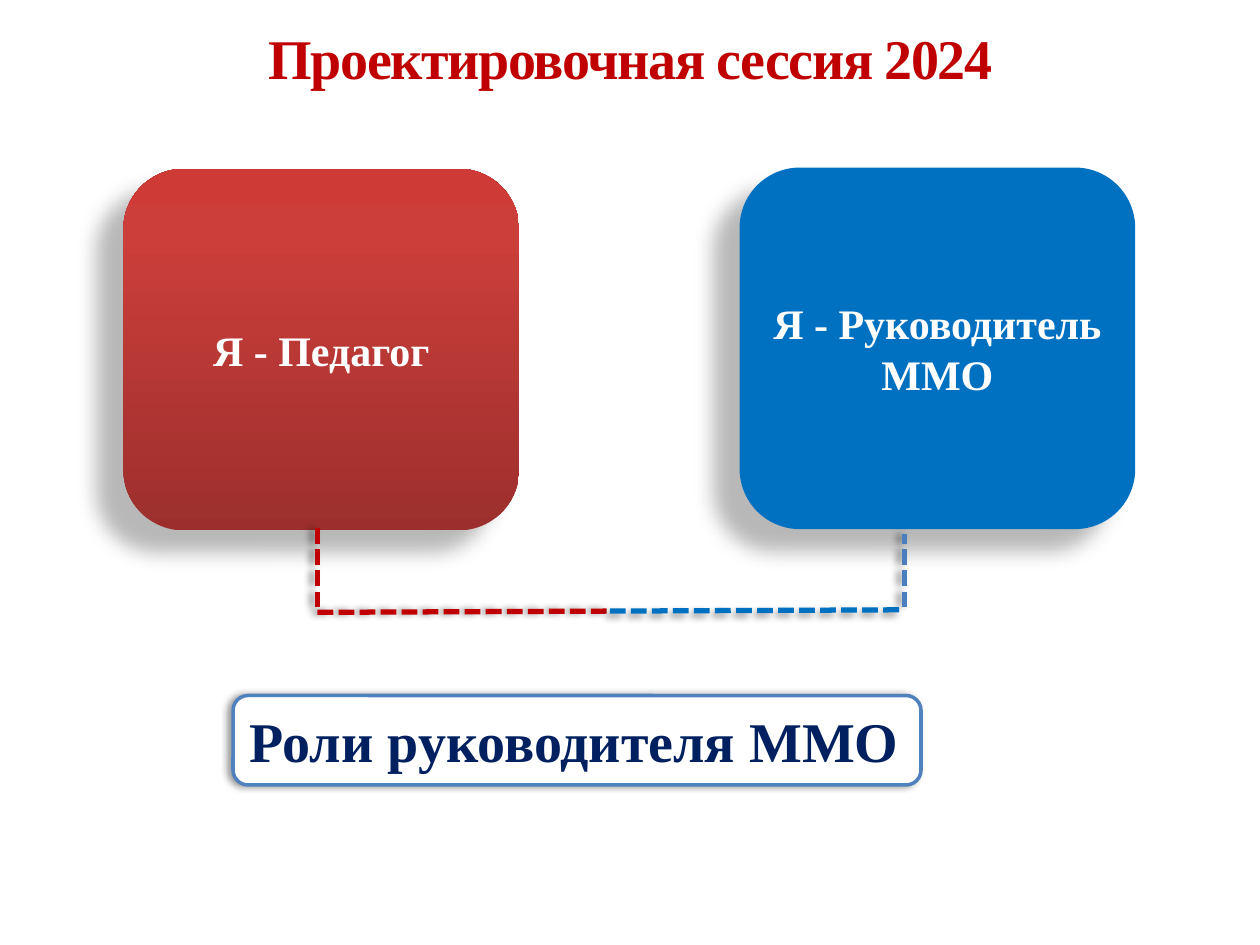
from lxml import etree
from pptx import Presentation
from pptx.dml.color import RGBColor
from pptx.enum.dml import MSO_LINE
from pptx.enum.shapes import MSO_CONNECTOR, MSO_SHAPE
from pptx.enum.text import MSO_ANCHOR, MSO_AUTO_SIZE, PP_ALIGN
from pptx.oxml import parse_xml
from pptx.oxml.ns import nsdecls, qn
from pptx.util import Inches, Pt

COLORS = {
    "red": "C00000", "blue": "0070C0", "steel": "4B7EBC", "border": "4F81BD",
    "navy": "002060", "white": "FFFFFF", "shadow": "000000",
}
RED_GRADIENT = [(0, "9C2F2D"), (80, "CB3E3A"), (100, "CE3B37")]
FONT = "Times New Roman"


def rgb(name):
    return RGBColor.from_string(COLORS[name])


def add_shadow(sp, alpha=40, blur=4, dist=3, angle=180):
    """Append an outer shadow; call after fill and line are set."""
    spPr = sp._element.spPr
    for old in spPr.findall(qn("a:effectLst")):
        spPr.remove(old)
    spPr.append(parse_xml(
        f'<a:effectLst {nsdecls("a")}><a:outerShdw blurRad="{Pt(blur)}" '
        f'dist="{Pt(dist)}" dir="{angle * 60000}" algn="ctr" rotWithShape="0">'
        f'<a:srgbClr val="{COLORS["shadow"]}"><a:alpha val="{alpha * 1000}"/>'
        '</a:srgbClr></a:outerShdw></a:effectLst>'))


def write(sp, text, size, color, align, anchor=MSO_ANCHOR.MIDDLE):
    tf = sp.text_frame
    tf.text = text
    tf.vertical_anchor = anchor
    p = tf.paragraphs[0]
    p.alignment = align
    r = p.runs[0]
    r.font.name, r.font.size, r.font.bold = FONT, Pt(size), True
    r.font.color.rgb = rgb(color)
    return r


def fill_gradient(sp, stops):
    """Fill with a vertical gradient running from bottom to top."""
    sp.fill.gradient()
    sp.fill.gradient_angle = 90
    gs_list = sp._element.spPr.find(qn("a:gradFill")).find(qn("a:gsLst"))
    for gs in list(gs_list):
        gs_list.remove(gs)
    for pos, color in stops:
        gs = etree.SubElement(gs_list, qn("a:gs"), pos=str(pos * 1000))
        etree.SubElement(gs, qn("a:srgbClr"), val=color)


def add_rounded(s, x, y, w, h):
    return s.shapes.add_shape(MSO_SHAPE.ROUNDED_RECTANGLE,
                              Inches(x), Inches(y), Inches(w), Inches(h))


def add_title(s, x, y, w, h):
    sp = s.shapes.title
    sp.left, sp.top, sp.width, sp.height = (Inches(v) for v in (x, y, w, h))
    r = write(sp, "Проектировочная сессия 2024", 32, "red", PP_ALIGN.CENTER)
    r._r.get_or_add_rPr().set("spc", "-80")
    sp.text_frame.auto_size = MSO_AUTO_SIZE.SHAPE_TO_FIT_TEXT


def add_role(s, text, x, y, w, h, color=None, gradient=None):
    sp = add_rounded(s, x, y, w, h)
    if gradient:
        fill_gradient(sp, gradient)
    else:
        sp.fill.solid()
        sp.fill.fore_color.rgb = rgb(color)
    sp.line.fill.background()
    add_shadow(sp, 28, 11.8, 19.7, 141)
    write(sp, text, 24, "white", PP_ALIGN.CENTER)


def add_dash(s, start, end, color, angle=180):
    line = s.shapes.add_connector(MSO_CONNECTOR.STRAIGHT,
                                  *(Inches(v) for v in start + end))
    line.line.color.rgb = rgb(color)
    line.line.width = Pt(3)
    line.line.dash_style = MSO_LINE.SQUARE_DOT
    add_shadow(line, angle=angle)


def add_bracket(s, x, y, w, h):
    """Dashed bracket joining the two roles, half red and half blue."""
    mid, right, bottom = x + w / 2, x + w, y + h
    add_dash(s, (x, bottom), (mid, bottom - 0.01), "red")
    add_dash(s, (x, bottom - 0.04), (x, y), "red")
    add_dash(s, (right + 0.02, bottom - 0.04), (right + 0.02, y + 0.08), "steel")
    add_dash(s, (mid, bottom - 0.01), (right, bottom - 0.02), "blue", 135)


def add_caption(s, x, y, w, h):
    sp = add_rounded(s, x, y, w, h)
    sp.fill.solid()
    sp.fill.fore_color.rgb = rgb("white")
    sp.line.color.rgb = rgb("border")
    sp.line.width = Pt(2)
    add_shadow(sp)
    write(sp, "Роли руководителя ММО", 32, "navy", PP_ALIGN.LEFT, MSO_ANCHOR.TOP)
    sp.text_frame.word_wrap = False
    sp.text_frame.auto_size = MSO_AUTO_SIZE.SHAPE_TO_FIT_TEXT


def main():
    prs = Presentation()
    prs.slide_width, prs.slide_height = Inches(10), Inches(7.5)
    s = prs.slides.add_slide(prs.slide_layouts[5])
    add_title(s, 1.72, 0.13, 6.57, 0.64)
    # Two roles
    add_role(s, "Я - Руководитель ММО", 5.87, 1.33, 3.14, 2.87, color="blue")
    add_role(s, "Я - Педагог", 0.98, 1.34, 3.14, 2.87, gradient=RED_GRADIENT)
    # Link and summary
    add_bracket(s, 2.52, 4.16, 4.64, 0.7)
    add_caption(s, 1.85, 5.52, 5.46, 0.71)
    prs.save("out.pptx")


if __name__ == "__main__":
    main()
